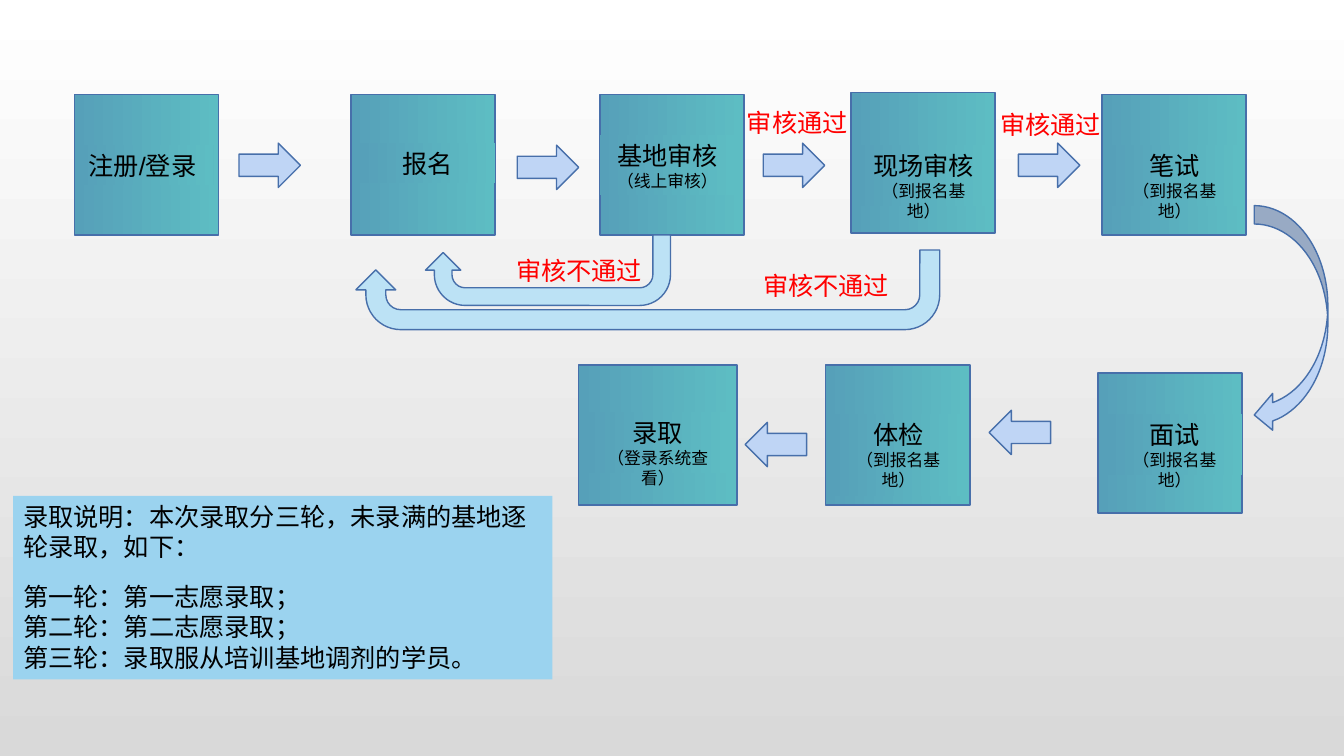
from pptx import Presentation
from pptx.dml.color import RGBColor
from pptx.enum.shapes import MSO_SHAPE
from pptx.enum.text import MSO_ANCHOR, PP_ALIGN
from pptx.util import Inches, Pt

FONT = "Arial"
EDGE = "476FAA"
TEAL = ("56A0B9", "5DBDC3")
ONSITE = "（到报名基地）"

# box left, top, width; label offset x, y; label width, height; title, note
STEPS = [
    (0.74, 0.94, 1.43, 0.04, 0.5, 1.34, 0.4, "注册/登录", ""),
    (3.48, 0.94, 1.43, 0.09, 0.48, 1.34, 0.4, "报名", ""),
    (5.95, 0.94, 1.43, 0, 0.4, 1.34, 0.6, "基地审核", "（线上审核）"),
    (8.44, 0.92, 1.43, 0.05, 0.52, 1.34, 0.6, "现场审核", ONSITE),
    (10.93, 0.94, 1.43, 0.05, 0.5, 1.34, 0.6, "笔试", ONSITE),
    (10.89, 3.7, 1.43, 0.09, 0.41, 1.34, 0.6, "面试", ONSITE),
    (8.19, 3.62, 1.43, 0.05, 0.49, 1.34, 0.81, "体检", ONSITE),
    (5.74, 3.62, 1.57, 0.07, 0.47, 1.43, 0.6, "录取", "（登录系统查看）"),
]
NEXT = [(2.37, 1.42, 0), (5.13, 1.44, 0), (7.57, 1.42, 0), (10.1, 1.42, 0),
        (9.81, 4.07, 180), (7.39, 4.19, 180)]
BACK = [(4.22, 2.33, 2.43, 0.7), (3.53, 2.48, 5.79, 0.79)]
RESULTS = [
    (7.31, 1.02, 1.63, "审核通过"),
    (9.82, 1.04, 1.63, "审核通过"),
    (5.02, 2.48, 1.63, "审核不通过"),
    (7.47, 2.63, 1.58, "审核不通过"),
]
NOTES = [
    "录取说明：本次录取分三轮，未录满的基地逐轮录取，如下：",
    "第一轮：第一志愿录取；",
    "第二轮：第二志愿录取；",
    "第三轮：录取服从培训基地调剂的学员。",
]


def color(code):
    return RGBColor.from_string(code)


def blend(fill, codes, angle):
    fill.gradient()
    fill.gradient_angle = angle
    for stop, code in zip(fill.gradient_stops, codes):
        stop.color.rgb = color(code)


def add_form(slide, kind, box, fill, line=None, turn=0):
    """Add a preset shape; a pair of colours gives a gradient."""
    form = slide.shapes.add_shape(kind, *map(Inches, box))
    form.shadow.inherit = False
    form.rotation = turn
    if isinstance(fill, tuple):
        blend(form.fill, fill, 0)
    else:
        form.fill.solid()
        form.fill.fore_color.rgb = color(fill)
    if line:
        form.line.color.rgb = color(line)
        form.line.width = Pt(1)
    else:
        form.line.fill.background()
    return form


def write(form, lines, sizes, align=PP_ALIGN.LEFT, ink="000000"):
    frame = form.text_frame
    frame.word_wrap = True
    frame.vertical_anchor = MSO_ANCHOR.TOP
    frame.text = "\n".join(lines)
    for para, size in zip(frame.paragraphs, sizes):
        para.alignment = align
        for run in para.runs:
            run.font.name = FONT
            run.font.size = Pt(size)
            run.font.color.rgb = color(ink)
    return frame


def add_step(slide, left, top, width, dx, dy, wide, high, title, note):
    add_form(slide, MSO_SHAPE.RECTANGLE, (left, top, width, 1.39), TEAL, EDGE)
    label = add_form(slide, MSO_SHAPE.RECTANGLE,
                     (left + dx, top + dy, wide, high), TEAL)
    lines = [title, note] if note else [title]
    align = PP_ALIGN.LEFT if title == STEPS[0][-2] else PP_ALIGN.CENTER
    write(label, lines, (18, 12), align)


def add_arrows(slide):
    for left, top, turn in NEXT:
        add_form(slide, MSO_SHAPE.RIGHT_ARROW, (left, top, 0.61, 0.44),
                 "BFD5F5", EDGE, turn)
    add_form(slide, MSO_SHAPE.CURVED_LEFT_ARROW, (12.44, 2.04, 0.73, 2.26),
             "BFD5F5", EDGE)
    for box in BACK:
        add_form(slide, MSO_SHAPE.U_TURN_ARROW, box, "BCE2F5", EDGE, 180)


def add_result(slide, left, top, width, text):
    box = slide.shapes.add_textbox(*map(Inches, (left, top, width, 0.4)))
    write(box, [text], [18], ink="FF0000")


def add_notes(slide, box):
    panel = add_form(slide, MSO_SHAPE.RECTANGLE, box, "9BD3EF")
    frame = write(panel, NOTES, [18] * len(NOTES))
    frame.paragraphs[1].space_before = Pt(14.4)


def main():
    deck = Presentation()
    deck.slide_width, deck.slide_height = Inches(13.33), Inches(7.5)
    slide = deck.slides.add_slide(deck.slide_layouts[6])
    blend(slide.background.fill, ("FFFFFF", "D9D9D9"), 270)
    for step in STEPS:
        add_step(slide, *step)
    add_arrows(slide)
    for result in RESULTS:
        add_result(slide, *result)
    add_notes(slide, (0.13, 4.92, 5.35, 1.82))
    deck.save("out.pptx")


if __name__ == "__main__":
    main()
